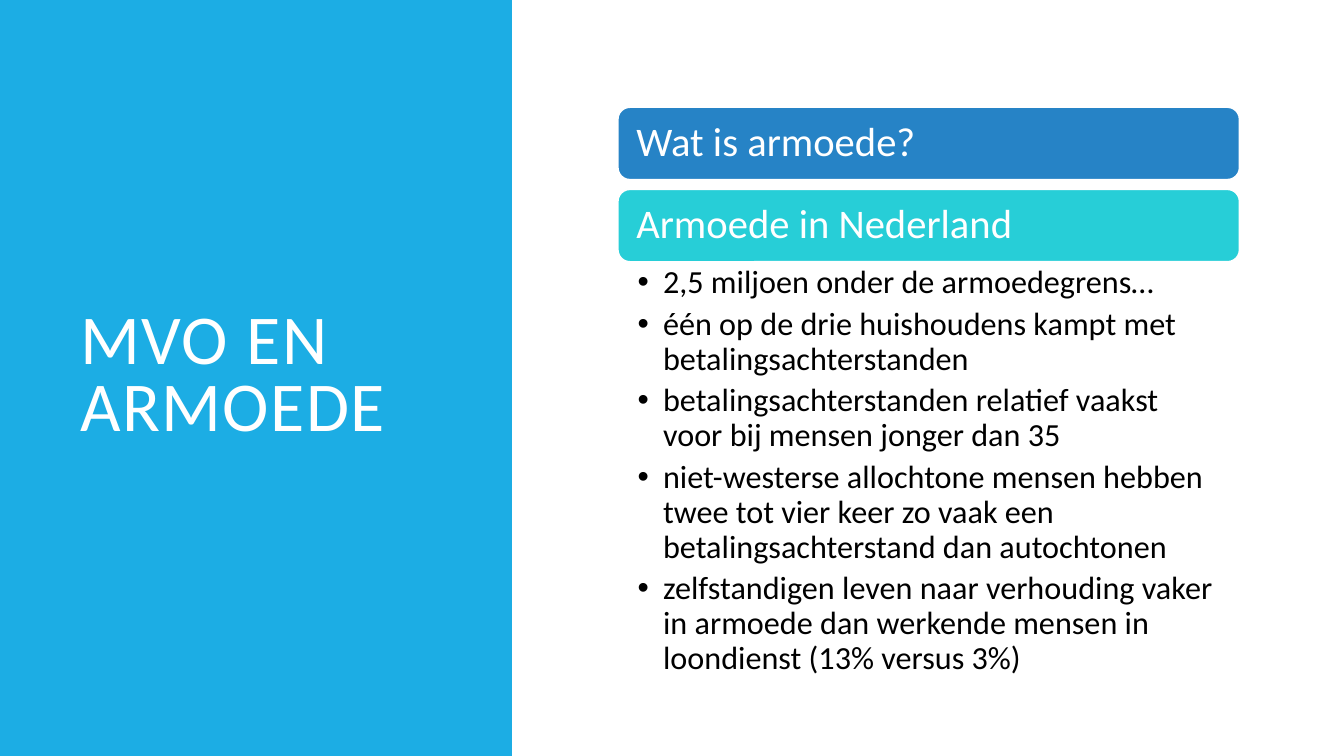
from pptx import Presentation
from pptx.dml.color import RGBColor
from pptx.enum.shapes import MSO_SHAPE as Shape
from pptx.enum.text import MSO_ANCHOR as Anchor, MSO_AUTO_SIZE as AutoSize, PP_ALIGN as Align
from pptx.util import Cm, Pt

COLORS = {"panel": "1CADE4", "blue": "2683C6", "teal": "27CED7",
          "white": "FFFFFF", "black": "000000"}


def color(name):
    return RGBColor.from_string(COLORS[name])


def write(frame, *texts, size, ink, spacing=0.9, after=0, anchor=Anchor.MIDDLE,
          margins=(0.25, 0.13, 0.25, 0.13), hanging=0, tracking=0):
    """Fill a frame, one paragraph per text; margins and hanging are in cm."""
    frame.word_wrap = True
    frame.auto_size = AutoSize.NONE
    frame.vertical_anchor = anchor
    (frame.margin_left, frame.margin_top,
     frame.margin_right, frame.margin_bottom) = [Cm(m) for m in margins]
    for i, text in enumerate(texts):
        paragraph = frame.add_paragraph() if i else frame.paragraphs[0]
        paragraph.alignment = Align.LEFT
        paragraph.line_spacing = spacing
        paragraph.space_before = Pt(0)
        paragraph.space_after = Pt(after)
        if hanging:
            properties = paragraph._p.get_or_add_pPr()
            properties.set("marL", str(Cm(hanging)))
            properties.set("indent", str(-Cm(hanging)))
        run = paragraph.add_run()
        run.text = text
        run.font.name = "Calibri"
        run.font.size = Pt(size)
        run.font.color.rgb = color(ink)
        if tracking:
            run.font._element.set("spc", str(tracking * 100))


deck = Presentation()
deck.slide_width, deck.slide_height = Cm(33.87), Cm(19.05)
slide = deck.slides.add_slide(deck.slide_layouts[1])
title, facts = slide.placeholders

# Blue panel, placed behind the title
panel = slide.shapes.add_shape(Shape.RECTANGLE, 0, 0, Cm(12.9), deck.slide_height)
panel.shadow.inherit = False
panel.fill.solid()
panel.fill.fore_color.rgb = color("panel")
panel.line.fill.background()
slide.shapes._spTree.insert(2, panel._element)

# Title
title.left, title.top, title.width, title.height = Cm(1.78), Cm(1.78), Cm(9.5), Cm(15.47)
write(title.text_frame, "MVO EN ARMOEDE", size=50, ink="white", spacing=0.8, tracking=1)

# Topic bars
LEFT, WIDTH = Cm(15.57), Cm(15.67)
for row, (topic, fill) in enumerate([("Wat is armoede?", "blue"),
                                     ("Armoede in Nederland", "teal")]):
    bar = slide.shapes.add_shape(Shape.ROUNDED_RECTANGLE, LEFT, Cm(2.7 + 2.07 * row),
                                 WIDTH, Cm(1.83))
    bar.shadow.inherit = False
    bar.fill.solid()
    bar.fill.fore_color.rgb = color(fill)
    bar.line.color.rgb = color("white")
    bar.line.width = Pt(1.25)
    write(bar.text_frame, topic, size=29, ink="white", margins=(0.38, 0.3, 0.38, 0.3))

# Facts under the second topic
facts.left, facts.top, facts.width, facts.height = LEFT, Cm(6.6), WIDTH, Cm(9.68)
write(facts.text_frame,
      "2,5 miljoen onder de armoedegrens…",
      "één op de drie huishoudens kampt met betalingsachterstanden",
      "betalingsachterstanden relatief vaakst voor bij mensen jonger dan 35",
      "niet-westerse allochtone mensen hebben twee tot vier keer zo vaak een "
      "betalingsachterstand dan autochtonen",
      "zelfstandigen leven naar verhouding vaker in armoede dan werkende mensen in "
      "loondienst (13% versus 3%)",
      size=23, ink="black", after=5, anchor=Anchor.TOP,
      margins=(0.5, 0.1, 0.58, 0.1), hanging=0.64)

deck.save("out.pptx")
